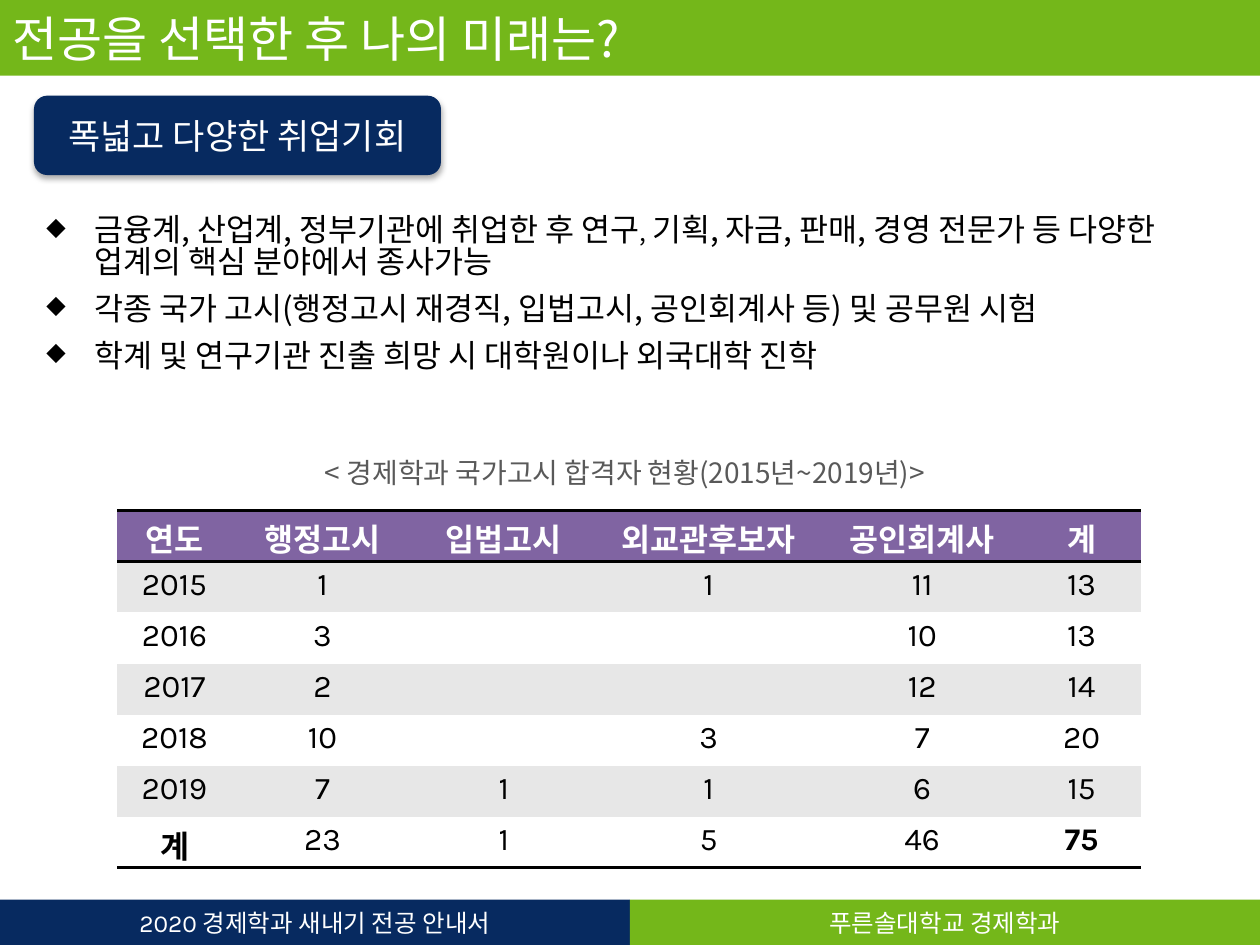
from lxml import etree
from pptx import Presentation
from pptx.dml.color import RGBColor
from pptx.enum import shapes, text
from pptx.oxml import ns
from pptx.util import Inches, Pt

NAVY = RGBColor(0x07, 0x2A, 0x60)
GREEN = RGBColor(0x74, 0xB7, 0x1A)
PURPLE = RGBColor(0x80, 0x64, 0xA2)
GRAY = RGBColor(0x59, 0x59, 0x59)
PALE = RGBColor(0xE7, 0xE7, 0xE7)
WHITE = RGBColor(0xFF, 0xFF, 0xFF)
BLACK = RGBColor(0, 0, 0)
NOTO = "Noto Sans CJK KR"
KARLA = "Karla"
LEFT, MID = text.PP_ALIGN.LEFT, text.PP_ALIGN.CENTER
RECT, ROUND = shapes.MSO_SHAPE.RECTANGLE, shapes.MSO_SHAPE.ROUNDED_RECTANGLE

POINTS = [
    [("금융계, 산업계, 정부기관에 취업한 후 연구", 18), (", ", 14),
     ("기획, 자금, 판매, 경영 전문가 등 다양한 업계의 핵심 분야에서 종사가능", 18)],
    [("각종 국가 고시(행정고시 재경직, 입법고시, 공인회계사 등) 및 공무원 시험", 18)],
    [("학계 및 연구기관 진출 희망 시 대학원이나 외국대학 진학", 18)],
]
HEAD = ["연도", "행정고시", "입법고시", "외교관후보자", "공인회계사", "계"]
ROWS = [
    ["2015", "1", "", "1", "11", "13"],
    ["2016", "3", "", "", "10", "13"],
    ["2017", "2", "", "", "12", "14"],
    ["2018", "10", "", "3", "7", "20"],
    ["2019", "7", "1", "1", "6", "15"],
    ["계", "23", "1", "5", "46", "75"],
]
WIDTHS = [0.91, 1.44, 1.44, 1.81, 1.58, 0.95]


def node(up, tag, **attrs):
    return etree.SubElement(up, ns.qn(tag), attrs)


def style(font, size, color, face=NOTO, bold=False):
    font.size, font.name, font.bold = Pt(size), face, bold
    font.color.rgb = color


def asian(para):
    for run in para.runs:
        node(run._r.get_or_add_rPr(), "a:ea", typeface=NOTO)


def write(para, words, size, color, face=NOTO, align=MID, bold=False):
    para.text = words
    para.alignment = align
    style(para.font, size, color, face, bold)
    asian(para)


def bar(slide, box, color, words, size, face=NOTO, align=MID, kind=RECT):
    shape = slide.shapes.add_shape(kind, *map(Inches, box))
    shape.shadow.inherit = False
    shape.fill.solid()
    shape.fill.fore_color.rgb = color
    shape.line.fill.background()
    shape.text_frame.vertical_anchor = text.MSO_ANCHOR.MIDDLE
    write(shape.text_frame.paragraphs[0], words, size, WHITE, face, align)
    return shape


def button(slide, box, words):
    shape = bar(slide, box, NAVY, words, 20, kind=ROUND)
    effect = shape._element.spPr.find(ns.qn("a:effectLst"))
    shade = node(effect, "a:outerShdw", blurRad=str(Pt(3.5)), dist=str(Pt(2.2)),
                 dir="5400000", rotWithShape="0")
    node(node(shade, "a:srgbClr", val="000000"), "a:alpha", val="32000")


def points(slide, box):
    frame = slide.shapes.add_textbox(*map(Inches, box)).text_frame
    frame.word_wrap = True
    for i, parts in enumerate(POINTS):
        para = frame.add_paragraph() if i else frame.paragraphs[0]
        para.line_spacing = 0.83
        para.space_before = Pt(9 if i else 0)
        style(para.font, 18, BLACK)
        for words, size in parts:
            run = para.add_run()
            run.text = words
            run.font.size = Pt(size)
        asian(para)
        props = para._p.get_or_add_pPr()
        props.set("marL", str(Inches(0.38)))
        props.set("indent", str(-Inches(0.38)))
        mark = etree.Element(ns.qn("a:buChar"), char="◆")
        scale = etree.Element(ns.qn("a:buSzPct"), val="80000")
        base = props.find(ns.qn("a:defRPr"))
        base.addprevious(scale)
        base.addprevious(mark)


def caption(slide, box, words):
    frame = slide.shapes.add_textbox(*map(Inches, box)).text_frame
    frame.word_wrap = True
    frame.vertical_anchor = text.MSO_ANCHOR.MIDDLE
    write(frame.paragraphs[0], words, 16, GRAY)


def edge(cell, side):
    line = node(cell._tc.get_or_add_tcPr(), side, w=str(Pt(2)))
    node(node(line, "a:solidFill"), "a:srgbClr", val=str(BLACK))


def grid(slide, box):
    data = [HEAD] + ROWS
    last = len(data) - 1
    table = slide.shapes.add_table(len(data), len(HEAD), *map(Inches, box)).table
    table.first_row = table.horz_banding = False
    look = table._tbl.tblPr.find(ns.qn("a:tableStyleId"))
    look.text = "{2D5ABB26-0587-4C30-8999-92F81FD0307C}"
    for col, width in zip(table.columns, WIDTHS):
        col.width = Inches(width)
    for r, row in enumerate(data):
        table.rows[r].height = Inches(box[3] / len(data))
        for c, words in enumerate(row):
            cell = table.cell(r, c)
            cell.margin_top, cell.margin_bottom = Inches(0.04), 0
            if r == 0:
                edge(cell, "a:lnT")
            if r in (0, last):
                edge(cell, "a:lnB")
            cell.fill.solid()
            cell.fill.fore_color.rgb = PURPLE if r == 0 else PALE if r % 2 else WHITE
            bold = r == 0 or words in ("계", "75")
            write(cell.text_frame.paragraphs[0], words, 18,
                  BLACK if r else WHITE, KARLA if r else NOTO, bold=bold)


def footer(slide, box):
    left, top, width, height = box
    half = width / 2
    bar(slide, (left, top, half, height), NAVY, "2020 경제학과 새내기 전공 안내서", 14, KARLA)
    bar(slide, (left + half, top, half, height), GREEN, "푸른솔대학교 경제학과", 14, KARLA)


def main():
    deck = Presentation()
    deck.slide_width, deck.slide_height = Inches(10), Inches(7.5)
    slide = deck.slides.add_slide(deck.slide_layouts[6])
    footer(slide, (0, 7.14, 10, 0.36))
    points(slide, (0.27, 1.67, 9.46, 2.05))
    bar(slide, (0, 0, 10, 0.6), GREEN, "전공을 선택한 후 나의 미래는?", 28, align=LEFT)
    button(slide, (0.27, 0.76, 3.23, 0.63), "폭넓고 다양한 취업기회")
    caption(slide, (0.23, 3.56, 9.46, 0.37), "< 경제학과 국가고시 합격자 현황(2015년~2019년)>")
    grid(slide, (0.93, 4.05, 8.13, 2.84))
    deck.save("out.pptx")


if __name__ == "__main__":
    main()
